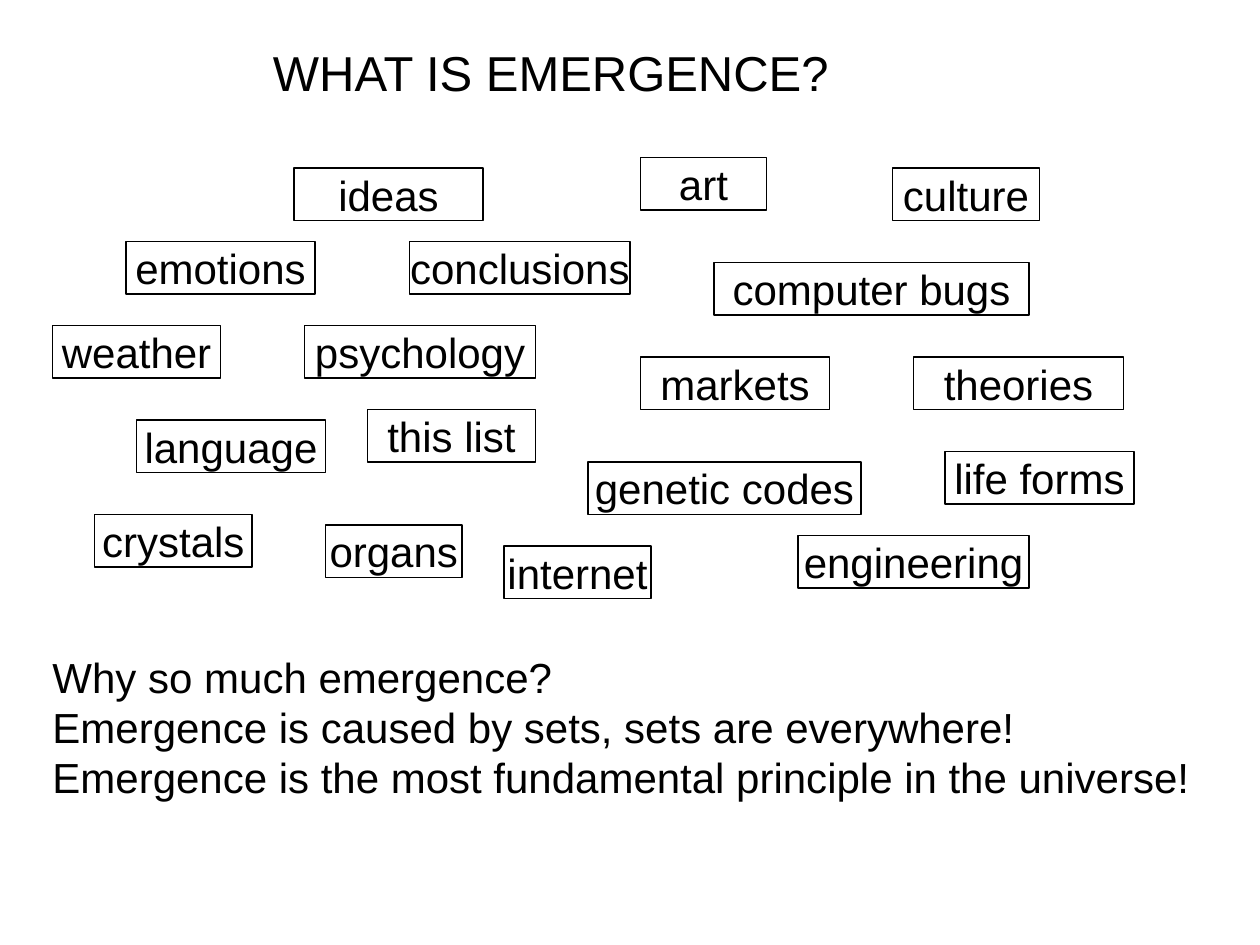
from dataclasses import dataclass

from pptx import Presentation
from pptx.dml.color import RGBColor
from pptx.enum.shapes import MSO_SHAPE
from pptx.enum.text import MSO_ANCHOR, PP_ALIGN
from pptx.util import Emu, Pt

EMU_PER_PX = 7620  # 120 px to the inch


@dataclass(frozen=True)
class Theme:
    font: str = "Arial"
    ink: RGBColor = RGBColor(0, 0, 0)
    title_size: int = 28
    body_size: int = 24
    line_width: float = 0.75


@dataclass(frozen=True)
class Example:
    text: str
    left: int
    top: int
    width: int


THEME = Theme()
BOX_HEIGHT = 50
TITLE = "WHAT IS EMERGENCE?"
EXAMPLES = [
    Example("ideas", 280, 160, 180),
    Example("emotions", 120, 230, 180),
    Example("conclusions", 390, 230, 210),
    Example("weather", 50, 310, 160),
    Example("computer bugs", 680, 250, 300),
    Example("art", 610, 150, 120),
    Example("markets", 610, 340, 180),
    Example("language", 130, 400, 180),
    Example("genetic codes", 560, 440, 260),
    Example("this list", 350, 390, 160),
    Example("theories", 870, 340, 200),
    Example("crystals", 90, 490, 150),
    Example("life forms", 900, 430, 180),
    Example("organs", 310, 500, 130),
    Example("culture", 850, 160, 140),
    Example("engineering", 760, 510, 220),
    Example("internet", 480, 520, 140),
    Example("psychology", 290, 310, 220),
]
CONCLUSION = [
    "Why so much emergence?",
    "Emergence is caused by sets, sets are everywhere!",
    "Emergence is the most fundamental principle in the universe!",
]


def px(length: int) -> Emu:
    return Emu(length * EMU_PER_PX)


def format_text(text_frame, size: int, alignment: PP_ALIGN, anchor: MSO_ANCHOR) -> None:
    text_frame.margin_left = text_frame.margin_right = 0
    text_frame.margin_top = text_frame.margin_bottom = 0
    text_frame.word_wrap = False
    text_frame.vertical_anchor = anchor
    for paragraph in text_frame.paragraphs:
        paragraph.alignment = alignment
        for run in paragraph.runs:
            run.font.name = THEME.font
            run.font.size = Pt(size)
            run.font.color.rgb = THEME.ink


def add_title(slide) -> None:
    title = slide.shapes.title
    title.left, title.top, title.width, title.height = map(px, (260, 40, 540, 70))
    title.text_frame.text = TITLE
    format_text(title.text_frame, THEME.title_size, PP_ALIGN.LEFT, MSO_ANCHOR.TOP)


def add_example(slide, example: Example) -> None:
    shape = slide.shapes.add_shape(
        MSO_SHAPE.RECTANGLE,
        px(example.left), px(example.top), px(example.width), px(BOX_HEIGHT),
    )
    shape.shadow.inherit = False
    shape.fill.background()
    shape.line.color.rgb = THEME.ink
    shape.line.width = Pt(THEME.line_width)
    shape.text_frame.text = example.text
    format_text(shape.text_frame, THEME.body_size, PP_ALIGN.CENTER, MSO_ANCHOR.MIDDLE)


def add_conclusion(slide) -> None:
    text_box = slide.shapes.add_textbox(px(50), px(620), px(1100), px(150))
    text_box.text_frame.text = "\n".join(CONCLUSION)
    format_text(text_box.text_frame, THEME.body_size, PP_ALIGN.LEFT, MSO_ANCHOR.TOP)


def main() -> None:
    presentation = Presentation()
    presentation.slide_width, presentation.slide_height = px(1200), px(900)
    slide = presentation.slides.add_slide(presentation.slide_layouts[5])

    # Heading
    add_title(slide)

    # Scattered examples of emergence
    for example in EXAMPLES:
        add_example(slide, example)

    # Closing statements
    add_conclusion(slide)

    presentation.save("out.pptx")


if __name__ == "__main__":
    main()
